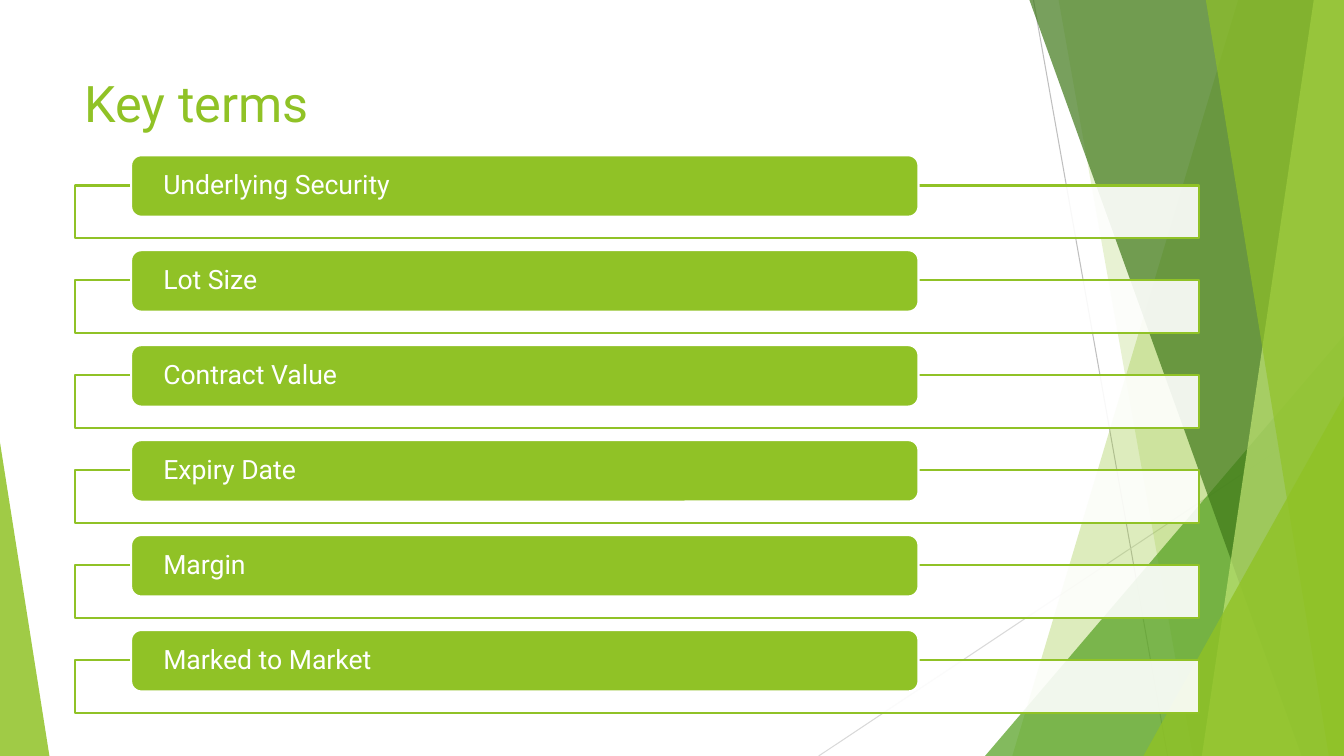
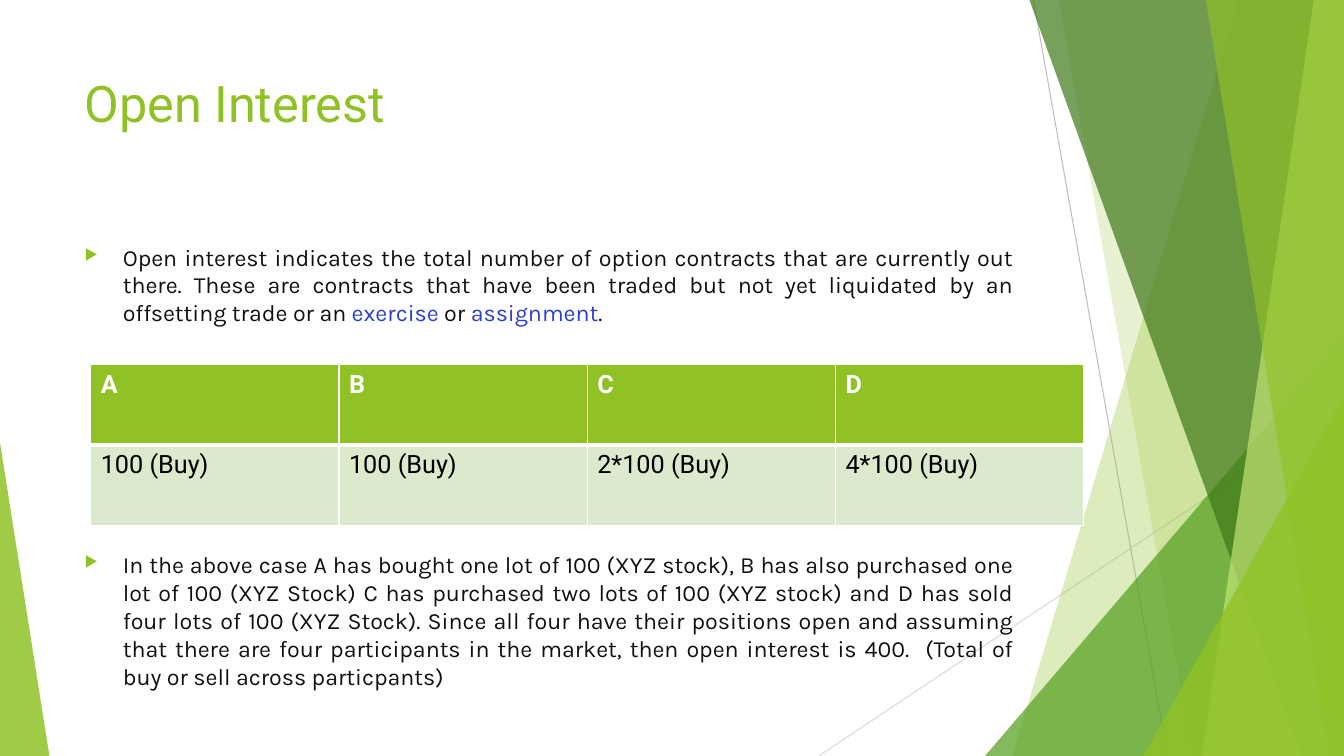
from typing import NamedTuple

from lxml import etree
from pptx import Presentation
from pptx.dml.color import RGBColor
from pptx.enum.shapes import MSO_CONNECTOR, MSO_SHAPE
from pptx.enum.text import MSO_ANCHOR, PP_ALIGN
from pptx.oxml.ns import qn
from pptx.util import Inches, Pt

WIDE, HIGH = 13.33, 7.5

LIME = RGBColor(0x90, 0xC2, 0x26)
GREEN = RGBColor(0x54, 0xA0, 0x21)
DARK = RGBColor(0x3F, 0x78, 0x19)
PALE = RGBColor(0xC0, 0xE4, 0x74)
MINT = RGBColor(0xDB, 0xE9, 0xCD)
WHITE = RGBColor(0xFF, 0xFF, 0xFF)
BLACK = RGBColor(0, 0, 0)
INK = RGBColor(0x11, 0x11, 0x11)
BLUE = RGBColor(0x2C, 0x40, 0xD0)
GREY = RGBColor(0xBF, 0xBF, 0xBF)
SILVER = RGBColor(0xD9, 0xD9, 0xD9)

HEAD_FONT, BODY_FONT = "Roboto", "Karla"

RECT = MSO_SHAPE.RECTANGLE
ROUND = MSO_SHAPE.ROUNDED_RECTANGLE
TRIANGLE = MSO_SHAPE.ISOSCELES_TRIANGLE
STRAIGHT = MSO_CONNECTOR.STRAIGHT
MIDDLE = MSO_ANCHOR.MIDDLE
LEFT, JUSTIFY = PP_ALIGN.LEFT, PP_ALIGN.JUSTIFY


class Ray(NamedTuple):
    start: tuple[float, float]
    end: tuple[float, float]
    color: RGBColor


class Band(NamedTuple):
    """A strip from the right edge to a slanted left side."""
    top: float
    foot: float
    color: RGBColor
    alpha: int


class Wedge(NamedTuple):
    """A right triangle standing on the bottom edge."""
    left: float
    top: float
    width: float
    peak: float
    color: RGBColor
    alpha: int


class Span(NamedTuple):
    text: str
    color: RGBColor = INK


RAYS = (
    Ray((10.25, 0), (11.58, HIGH), GREY),
    Ray((WIDE, 4.03), (8.12, HIGH), SILVER),
)
DECOR = (
    Band(12.28, 10.04, LIME, 30),
    Band(10.5, 11.83, LIME, 20),
    Wedge(9.77, 3.33, 3.56, 1, GREEN, 72),
    Band(10.21, 12.91, DARK, 70),
    Band(13.03, 11.92, PALE, 70),
    Band(11.96, 13.18, LIME, 65),
    Wedge(11.34, 3.93, 1.99, 1, LIME, 80),
    Wedge(0, 4.39, 0.49, 0, LIME, 85),
)

TERMS = ("Underlying Security", "Lot Size", "Contract Value",
         "Expiry Date", "Margin", "Marked to Market")

BODY = (
    (
        Span("Open interest indicates the total number of option contracts "
             "that are currently out there. These are contracts that have "
             "been traded but not yet liquidated by an "
             "offsetting trade or an "),
        Span("exercise", BLUE),
        Span(" or "),
        Span("assignment", BLUE),
        Span("."),
    ),
    (
        Span("In the above case A has bought one lot of 100 (XYZ stock), B "
             "has also purchased one lot of 100 (XYZ Stock) C has purchased "
             "two lots of 100 (XYZ stock) and D has sold four lots of 100 "
             "(XYZ Stock). Since all four have their positions open and "
             "assuming that there are four participants in the market, then "
             "open interest is 400.  (Total of buy or sell across "
             "particpants)"),
    ),
)
TABLE_GAP = 160

TRADES = (
    ("A", "B", "C", "D"),
    ("100 (Buy)", "100 (Buy)", "2*100 (Buy)", "4*100 (Buy)"),
)


def paint(shape, color: RGBColor, alpha: int = 100) -> None:
    """Fill a shape, with alpha in percent, and drop its line and shadow."""
    shape.shadow.inherit = False
    shape.fill.solid()
    shape.fill.fore_color.rgb = color
    shape.line.fill.background()
    if alpha < 100:
        tone = shape.fill._xPr.find(".//" + qn("a:srgbClr"))
        etree.SubElement(tone, qn("a:alpha"), val=str(alpha * 1000))


def edge(shape, color: RGBColor) -> None:
    shape.line.color.rgb = color
    shape.line.width = Pt(1.5)


def style(font, name: str, size: float, color: RGBColor) -> None:
    font.name = name
    font.size = Pt(size)
    font.color.rgb = color


def draw_ray(slide, ray: Ray) -> None:
    ends = [Inches(n) for n in (*ray.start, *ray.end)]
    line = slide.shapes.add_connector(STRAIGHT, *ends)
    line.line.color.rgb = ray.color
    line.line.width = Pt(0.75)
    etree.SubElement(line._element.spPr, qn("a:effectLst"))


def draw_band(slide, band: Band) -> None:
    pen = slide.shapes.build_freeform(Inches(band.top), 0)
    rest = ((WIDE, 0), (WIDE, HIGH), (band.foot, HIGH))
    pen.add_line_segments([(Inches(x), Inches(y)) for x, y in rest])
    paint(pen.convert_to_shape(), band.color, band.alpha)


def draw_wedge(slide, wedge: Wedge) -> None:
    shape = slide.shapes.add_shape(
        TRIANGLE, Inches(wedge.left), Inches(wedge.top),
        Inches(wedge.width), Inches(HIGH - wedge.top))
    shape.adjustments[0] = wedge.peak
    paint(shape, wedge.color, wedge.alpha)


def add_text(slide, top: float, height: float):
    box = slide.shapes.add_textbox(
        Inches(0.74), Inches(top), Inches(9.4), Inches(height))
    box.text_frame.word_wrap = True
    return box.text_frame


def add_slide(deck, title: str):
    """Add a slide with the shared backdrop and title."""
    slide = deck.slides.add_slide(deck.slide_layouts[6])
    for ray in RAYS:
        draw_ray(slide, ray)
    for part in DECOR:
        if isinstance(part, Band):
            draw_band(slide, part)
        else:
            draw_wedge(slide, part)
    para = add_text(slide, 0.67, 1.44).paragraphs[0]
    para.text = title
    style(para.font, HEAD_FONT, 36, LIME)
    return slide


def draw_term(slide, term: str, top: float) -> None:
    """Draw an outlined panel with the term's bar across its top edge."""
    panel = slide.shapes.add_shape(
        RECT, Inches(0.74), Inches(top + 0.3), Inches(11.15), Inches(0.52))
    paint(panel, WHITE, 90)
    edge(panel, LIME)

    bar = slide.shapes.add_shape(
        ROUND, Inches(1.3), Inches(top), Inches(7.81), Inches(0.61))
    paint(bar, LIME)
    edge(bar, WHITE)
    frame = bar.text_frame
    frame.word_wrap = True
    frame.vertical_anchor = MIDDLE
    frame.margin_left = frame.margin_right = Inches(0.29)
    frame.margin_top = frame.margin_bottom = 0
    para = frame.paragraphs[0]
    para.text = term
    para.alignment = LEFT
    para.line_spacing = 0.9
    style(para.font, HEAD_FONT, 19, WHITE)


def add_bullet(para) -> None:
    props = para._p.get_or_add_pPr()
    props.set("marL", str(Inches(0.38)))
    props.set("indent", str(-Inches(0.38)))
    tint = etree.SubElement(props, qn("a:buClr"))
    etree.SubElement(tint, qn("a:srgbClr"), val=str(LIME))
    etree.SubElement(props, qn("a:buSzPct"), val="65000")
    etree.SubElement(props, qn("a:buChar"), char="▶")


def add_body(slide) -> None:
    frame = add_text(slide, 2.36, 4.24)
    for i, spans in enumerate(BODY):
        para = frame.add_paragraph() if i else frame.paragraphs[0]
        para.alignment = JUSTIFY
        para.space_before = Pt(TABLE_GAP * i)
        add_bullet(para)
        for span in spans:
            run = para.add_run()
            run.text = span.text
            style(run.font, BODY_FONT, 16.6, span.color)


def add_border(cell, side: str, width: float) -> None:
    props = cell._tc.get_or_add_tcPr()
    line = etree.SubElement(props, qn("a:ln" + side), w=str(Pt(width)))
    fill = etree.SubElement(line, qn("a:solidFill"))
    etree.SubElement(fill, qn("a:srgbClr"), val=str(WHITE))


def add_trades(slide) -> None:
    rows, cols = len(TRADES), len(TRADES[0])
    table = slide.shapes.add_table(
        rows, cols, Inches(0.9), Inches(3.62),
        Inches(9.85), Inches(1.59)).table
    table.horz_banding = False
    for r, row in enumerate(TRADES):
        head = r == 0
        for c, text in enumerate(row):
            cell = table.cell(r, c)
            for side in "LRTB":
                joint = side == ("B" if head else "T")
                add_border(cell, side, 3 if joint else 1)
            cell.fill.solid()
            cell.fill.fore_color.rgb = LIME if head else MINT
            cell.text = text
            font = cell.text_frame.paragraphs[0].font
            style(font, HEAD_FONT, 18, WHITE if head else BLACK)
            font.bold = head


def main() -> None:
    deck = Presentation()
    deck.slide_width, deck.slide_height = Inches(WIDE), Inches(HIGH)

    terms = add_slide(deck, "Key terms")
    first, last = 1.54, 6.25
    step = (last - first) / (len(TERMS) - 1)
    for i, term in enumerate(TERMS):
        draw_term(terms, term, first + i * step)

    interest = add_slide(deck, "Open Interest")
    add_body(interest)
    add_trades(interest)

    deck.save("out.pptx")


if __name__ == "__main__":
    main()
